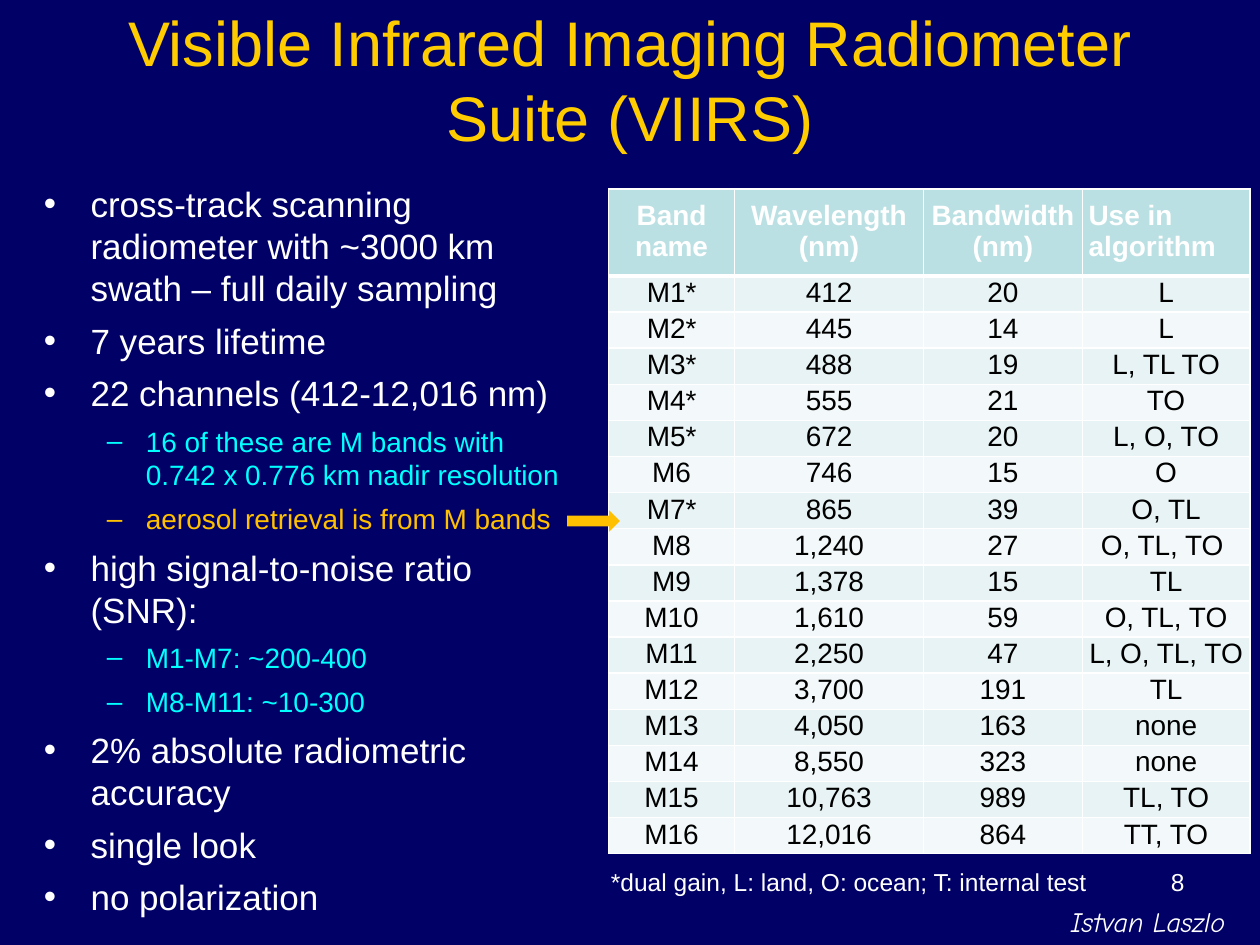
from pptx import Presentation
from pptx.dml.color import RGBColor
from pptx.enum.shapes import MSO_SHAPE
from pptx.enum.text import MSO_ANCHOR, PP_ALIGN
from pptx.oxml.ns import qn
from pptx.util import Inches, Pt
from lxml.etree import SubElement

NAVY = RGBColor(0x00, 0x00, 0x66)
GOLD = RGBColor(0xFF, 0xCC, 0x00)
AMBER = RGBColor(0xFF, 0xC0, 0x00)
CYAN = RGBColor(0x00, 0xFF, 0xFF)
WHITE = RGBColor(0xFF, 0xFF, 0xFF)
BLACK = RGBColor(0x00, 0x00, 0x00)
TEAL = RGBColor(0xBB, 0xE0, 0xE3)
BANDS = RGBColor(0xF3, 0xF9, 0xFA), RGBColor(0xE7, 0xF3, 0xF4)

TITLE = "Visible Infrared Imaging Radiometer Suite (VIIRS)"
NOTE = "*dual gain, L: land, O: ocean; T: internal test"

# level, text, colour
POINTS = [
    (0, "cross-track scanning radiometer with ~3000 km swath – full daily sampling", WHITE),
    (0, "7 years lifetime", WHITE),
    (0, "22 channels (412-12,016 nm)", WHITE),
    (1, "16 of these are M bands with 0.742 x 0.776 km nadir resolution", CYAN),
    (1, "aerosol retrieval is from M bands", AMBER),
    (0, "high signal-to-noise ratio (SNR):", WHITE),
    (1, "M1-M7: ~200-400", CYAN),
    (1, "M8-M11: ~10-300", CYAN),
    (0, "2% absolute radiometric accuracy", WHITE),
    (0, "single look", WHITE),
    (0, "no polarization", WHITE),
]
# bullet, text indent, hanging indent, size
LEVELS = [("•", 0.37, 0.37, 20), ("–", 0.81, 0.31, 16)]

ROWS = [
    ("Band name", "Wavelength (nm)", "Bandwidth (nm)", "Use in algorithm"),
    ("M1*", "412", "20", "L"),
    ("M2*", "445", "14", "L"),
    ("M3*", "488", "19", "L, TL TO"),
    ("M4*", "555", "21", "TO"),
    ("M5*", "672", "20", "L, O, TO"),
    ("M6", "746", "15", "O"),
    ("M7*", "865", "39", "O, TL"),
    ("M8", "1,240", "27", "O, TL, TO "),
    ("M9", "1,378", "15", "TL"),
    ("M10", "1,610", "59", "O, TL, TO"),
    ("M11", "2,250", "47", "L, O, TL, TO"),
    ("M12", "3,700", "191", "TL"),
    ("M13", "4,050", "163", "none"),
    ("M14", "8,550", "323", "none"),
    ("M15", "10,763", "989", "TL, TO"),
    ("M16", "12,016", "864", "TT, TO"),
]
COLS = [1, 1.5, 1.26, 1.33]
HIGH, HEAD = 5.28, 0.69


def style(para, size, color, face="Arial", bold=False, italic=False):
    font = para.font
    font.name, font.size, font.color.rgb = face, Pt(size), color
    font.bold, font.italic = bold, italic


def add_text(slide, box, text, size, color, align=PP_ALIGN.LEFT,
             anchor=MSO_ANCHOR.TOP, wrap=True, **look):
    frame = slide.shapes.add_textbox(*map(Inches, box)).text_frame
    frame.word_wrap, frame.vertical_anchor = wrap, anchor
    para = frame.paragraphs[0]
    para.text, para.alignment = text, align
    style(para, size, color, **look)


def add_points(slide):
    frame = slide.shapes.add_textbox(*map(Inches, (0.25, 1.4, 4.42, 5.99))).text_frame
    frame.word_wrap = True
    for i, (level, text, color) in enumerate(POINTS):
        mark, left, hang, size = LEVELS[level]
        para = frame.add_paragraph() if i else frame.paragraphs[0]
        para.text, para.level, para.space_after = text, level, Pt(6)
        props = para._p.get_or_add_pPr()
        props.set("marL", str(Inches(left)))
        props.set("indent", str(-Inches(hang)))
        SubElement(props, qn("a:buFont")).set("typeface", "Arial")
        SubElement(props, qn("a:buChar")).set("char", mark)
        style(para, size, color)


def add_edges(cell, base):
    """Draw white cell borders, the lower one base points wide."""
    props = cell._tc.get_or_add_tcPr()
    for side, width in (("L", 1), ("R", 1), ("T", 1), ("B", base)):
        line = SubElement(props, qn(f"a:ln{side}"), w=str(Pt(width)))
        fill = SubElement(line, qn("a:solidFill"))
        SubElement(fill, qn("a:srgbClr")).set("val", str(WHITE))


def add_bands(slide):
    table = slide.shapes.add_table(
        len(ROWS), len(COLS), Inches(4.83), Inches(1.5),
        Inches(sum(COLS)), Inches(HIGH)).table
    for col, width in zip(table.columns, COLS):
        col.width = Inches(width)
    for r, texts in enumerate(ROWS):
        head = r == 0
        table.rows[r].height = Inches(HEAD if head else (HIGH - HEAD) / (len(ROWS) - 1))
        for c, text in enumerate(texts):
            cell = table.cell(r, c)
            cell.margin_left = cell.margin_right = Inches(0.05)
            cell.margin_top, cell.margin_bottom = 0, Inches(0.02)
            cell.vertical_anchor = MSO_ANCHOR.MIDDLE
            add_edges(cell, 3 if head else 1)
            cell.fill.solid()
            cell.fill.fore_color.rgb = TEAL if head else BANDS[r % 2]
            para = cell.text_frame.paragraphs[0]
            para.text = text
            last = c == len(COLS) - 1
            para.alignment = PP_ALIGN.LEFT if head and last else PP_ALIGN.CENTER
            style(para, 16, WHITE if head else BLACK, bold=head)


def add_arrow(slide):
    arrow = slide.shapes.add_shape(
        MSO_SHAPE.RIGHT_ARROW, *map(Inches, (4.5, 4.05, 0.42, 0.17)))
    arrow.shadow.inherit = False
    arrow.fill.solid()
    arrow.fill.fore_color.rgb = AMBER
    arrow.line.fill.background()


def main():
    deck = Presentation()
    deck.slide_width, deck.slide_height = Inches(10), Inches(7.5)
    slide = deck.slides.add_slide(deck.slide_layouts[6])
    slide.background.fill.solid()
    slide.background.fill.fore_color.rgb = NAVY
    add_text(slide, (0.5, 0, 9, 1.25), TITLE, 36, GOLD,
             PP_ALIGN.CENTER, MSO_ANCHOR.MIDDLE)
    add_points(slide)
    add_bands(slide)
    add_text(slide, (7.17, 6.83, 2.33, 0.52), "8", 14, WHITE, PP_ALIGN.RIGHT)
    add_text(slide, (4.75, 6.83, 4.08, 0.34), NOTE, 14, WHITE, wrap=False)
    add_arrow(slide)
    add_text(slide, (8.4, 7.13, 1.6, 0.37), "Istvan Laszlo", 16, WHITE,
             wrap=False, face="Comic Neue", italic=True)
    deck.save("out.pptx")


if __name__ == "__main__":
    main()
